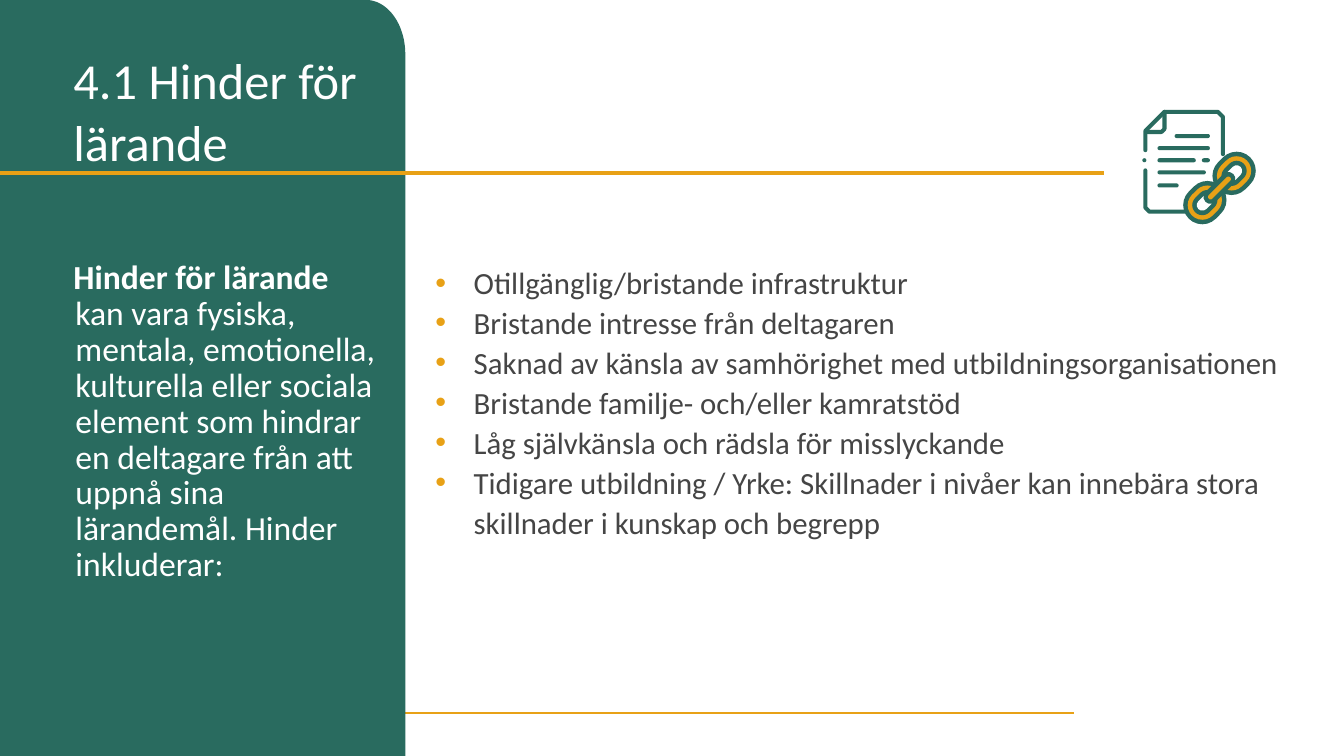
from math import cos, pi, sin, sqrt

from lxml import etree
from pptx import Presentation
from pptx.dml.color import RGBColor
from pptx.enum import shapes as sh, text as tx
from pptx.oxml.ns import qn
from pptx.util import Inches, Pt

# Content
TITLE = "4.1 Hinder för lärande"
INTRO = [
    ("Hinder för lärande ", True),
    ("kan vara fysiska, mentala, emotionella, kulturella eller sociala element "
     "som hindrar en deltagare från att uppnå sina lärandemål. "
     "Hinder inkluderar:", False),
]
POINTS = [
    "Otillgänglig/bristande infrastruktur",
    "Bristande intresse från deltagaren",
    "Saknad av känsla av samhörighet med utbildningsorganisationen",
    "Bristande familje- och/eller kamratstöd",
    "Låg självkänsla och rädsla för misslyckande",
    "Tidigare utbildning / Yrke: Skillnader i nivåer kan innebära stora "
    "skillnader i kunskap och begrepp",
]
HEX = {"green": "296B5F", "gold": "E8A116", "white": "FFFFFF", "gray": "454545"}
FONT = "Calibri"

# Icon geometry: page outline, text rows (left, top, width), chain links
THICK = 0.04
PAGE = [
    [(12.13, 1.53), (12.13, 1.16), (12.08, 1.11), (11.55, 1.11),
     (11.36, 1.3), (11.36, 1.49)],
    [(11.38, 1.31), (11.52, 1.31), (11.55, 1.28), (11.55, 1.11)],
    [(11.36, 1.69), (11.36, 2.06), (11.4, 2.1), (11.76, 2.1)],
]
ROWS = [(11.65, 1.33, 0.35), (11.48, 1.45, 0.52), (11.48, 1.57, 0.38),
        (11.92, 1.57, 0.08), (11.33, 1.57, THICK), (11.48, 1.69, 0.48),
        (11.48, 1.82, 0.21)]
LINKS = [(12.24, 1.72), (11.95, 2.01)]
RINGS = [(0.38, "green"), (0.29, "gold"), (0.2, "green"), (0.11, "white")]
BAR = [(0.14, "green"), (0.05, "gold")]

deck = Presentation()
deck.slide_width, deck.slide_height = Inches(13.33), Inches(7.5)
slide = deck.slides.add_slide(deck.slide_layouts[6])
items = slide.shapes


def tint(name):
    return RGBColor.from_string(HEX[name])


def paint(shape, name):
    shape.shadow.inherit = False
    shape.fill.solid()
    shape.fill.fore_color.rgb = tint(name)
    shape.line.fill.background()


def outline(points, close):
    pen = items.build_freeform(Inches(points[0][0]), Inches(points[0][1]), scale=1.0)
    pen.add_line_segments([(Inches(x), Inches(y)) for x, y in points[1:]], close=close)
    return pen.convert_to_shape()


def rule(start, end, y, width):
    line = items.add_connector(sh.MSO_CONNECTOR.STRAIGHT, Inches(start), Inches(y),
                               Inches(end), Inches(y))
    line.line.color.rgb = tint("gold")
    line.line.width = Pt(width)
    etree.SubElement(line._element.spPr, qn("a:effectLst"))


def pill(left, top, width, height, name, angle=0):
    shape = items.add_shape(sh.MSO_SHAPE.ROUNDED_RECTANGLE, Inches(left), Inches(top),
                            Inches(width), Inches(height))
    shape.adjustments[0] = 0.5
    shape.rotation = angle
    paint(shape, name)


def nest(center, core, layers):
    """Stack slanted pills whose round ends share the same two centres."""
    for size, name in layers:
        wide = core + size
        pill(center[0] - wide / 2, center[1] - size / 2, wide, size, name, -45)


def box(left, top, width, height):
    frame = items.add_textbox(Inches(left), Inches(top), Inches(width),
                              Inches(height)).text_frame
    frame.word_wrap = True
    return frame


def style(font, size, name, bold=False):
    font.name, font.size, font.bold = FONT, Pt(size), bold
    font.color.rgb = tint(name)


def indent(para, first, left):
    props = para._p.get_or_add_pPr()
    props.set("marL", str(Inches(left)))
    props.set("indent", str(Inches(first)))
    return props


# Footer rule, side panel with one rounded corner, header rule
rule(0, 10.65, 7.07, 1.5)
wide, rx, ry = 4.02, 0.39, 0.54
arc = [(wide - rx + rx * sin(k * pi / 48), ry - ry * cos(k * pi / 48))
       for k in range(25)]
paint(outline([(0, 0)] + arc + [(wide, 7.5), (0, 7.5)], True), "green")
rule(0, 10.95, 1.72, 2.75)

# Icon: page
for points in PAGE:
    edge = outline(points, False)
    edge.shadow.inherit = False
    edge.fill.background()
    edge.line.color.rgb = tint("green")
    edge.line.width = Inches(THICK)
    stroke = edge._element.spPr.find(qn("a:ln"))
    stroke.set("cap", "rnd")
    etree.SubElement(stroke, qn("a:round"))
for left, top, width in ROWS:
    pill(left, top, width, THICK, "green")

# Icon: chain
for center in LINKS:
    nest(center, 0.05 * sqrt(2), RINGS)
middle = [sum(axis) / 2 for axis in zip(*LINKS)]
nest(middle, 0.25, BAR)

# Bullet list
frame = box(4.22, 2.54, 8.95, 3.75)
frame.text = "\n".join(POINTS)
for para in frame.paragraphs:
    props = indent(para, -0.38, 0.38)
    para.line_spacing = 1.08
    color = etree.SubElement(props, qn("a:buClr"))
    etree.SubElement(color, qn("a:srgbClr")).set("val", HEX["gold"])
    etree.SubElement(props, qn("a:buFont")).set("typeface", "Arial")
    etree.SubElement(props, qn("a:buChar")).set("char", "•")
    style(para.runs[0].font, 22, "gray")

# Panel text
para = box(0.63, 2.54, 3.21, 3.75).paragraphs[0]
indent(para, -0.02, 0.02)
para.line_spacing = 0.89
for words, bold in INTRO:
    run = para.add_run()
    run.text = words
    style(run.font, 24, "white", bold)

# Title
frame = box(0.63, 0.42, 3.73, 0.88)
frame.vertical_anchor = tx.MSO_ANCHOR.TOP
frame.text = TITLE
para = frame.paragraphs[0]
para.line_spacing = 1.03
style(para.runs[0].font, 36, "white")

deck.save("out.pptx")
